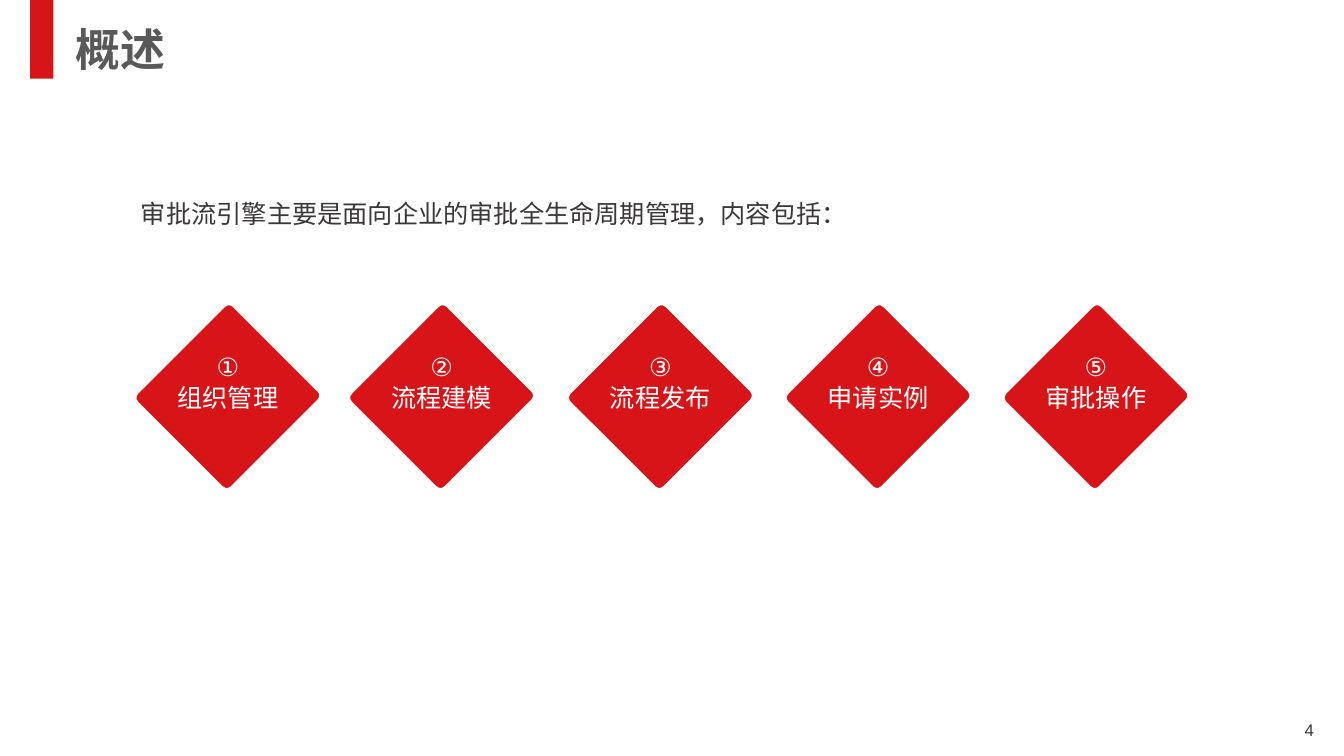
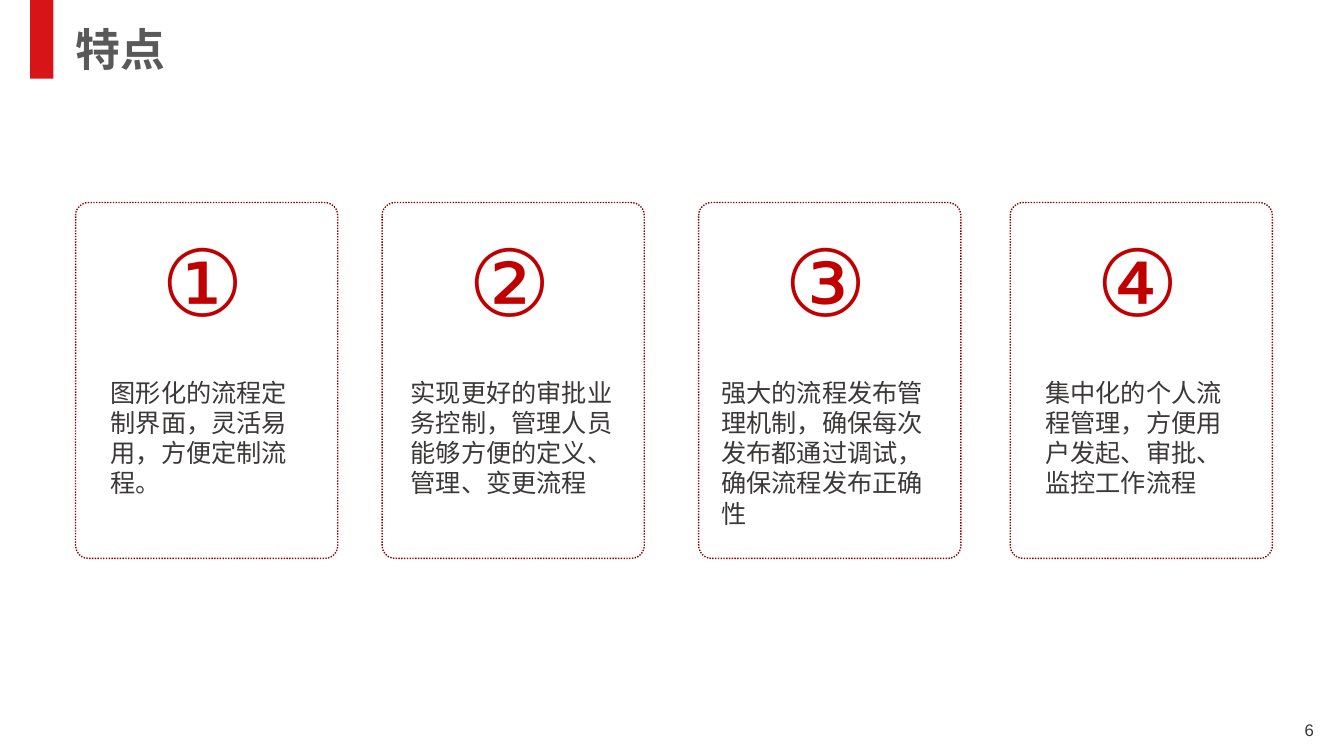
from pptx import Presentation
from pptx.dml.color import RGBColor
from pptx.enum.dml import MSO_LINE
from pptx.enum.shapes import MSO_SHAPE as SHAPE
from pptx.enum.text import MSO_ANCHOR as ANCHOR, PP_ALIGN as ALIGN
from pptx.util import Inches, Pt

FONT = "Arial"
RED = RGBColor(0xD7, 0x14, 0x18)
NUMERAL_RED = RGBColor(0xC0, 0x00, 0x00)
BORDER_RED = RGBColor(0x8E, 0x00, 0x00)
TITLE_GRAY = RGBColor(0x59, 0x59, 0x59)
BODY_GRAY = RGBColor(0x3B, 0x38, 0x38)
WHITE = RGBColor(0xFF, 0xFF, 0xFF)

CORNER = 0.049
DIAMOND_W, DIAMOND_H, DIAMOND_TOP = 1.32, 1.35, 3.26
CARD_W, CARD_H, CARD_TOP = 2.6, 3.53, 2.01

STEPS = [
    (1.6, "①", "组织管理"),
    (3.72, "②", "流程建模"),
    (5.89, "③", "流程发布"),
    (8.05, "④", "申请实例"),
    (10.21, "⑤", "审批操作"),
]
FEATURES = [
    (0.75, "①", 2.1, "图形化的流程定制界面，灵活易用，方便定制流程。"),
    (3.79, "②", 2.23, "实现更好的审批业务控制，管理人员能够方便的定义、管理、变更流程"),
    (6.93, "③", 2.35, "强大的流程发布管理机制，确保每次发布都通过调试，确保流程发布正确性"),
    (10.02, "④", 2.1, "集中化的个人流程管理，方便用户发起、审批、监控工作流程"),
]


def add_text(slide, box, *lines, size=18, color=BODY_GRAY, bold=False,
             align=ALIGN.LEFT, wrap=True, spacing=None):
    frame = slide.shapes.add_textbox(*map(Inches, box)).text_frame
    frame.word_wrap = wrap
    frame.vertical_anchor = ANCHOR.TOP
    for index, line in enumerate(lines):
        paragraph = frame.add_paragraph() if index else frame.paragraphs[0]
        paragraph.alignment = align
        if spacing:
            paragraph.line_spacing = spacing
        run = paragraph.add_run()
        run.text = line
        run.font.name = FONT
        run.font.size = Pt(size)
        run.font.bold = bold
        run.font.color.rgb = color


def add_block(slide, kind, box, fill, line=None, width=1, dash=None):
    block = slide.shapes.add_shape(kind, *map(Inches, box))
    block.shadow.inherit = False
    block.fill.solid()
    block.fill.fore_color.rgb = fill
    if kind == SHAPE.ROUNDED_RECTANGLE:
        block.adjustments[0] = CORNER
    if line is None:
        block.line.fill.background()
    else:
        block.line.color.rgb = line
        block.line.width = Pt(width)
        if dash:
            block.line.dash_style = dash
    return block


def add_page(deck, title, number):
    slide = deck.slides.add_slide(deck.slide_layouts[6])
    add_block(slide, SHAPE.RECTANGLE, (0.3, 0, 0.23, 0.78), RED)
    add_text(slide, (10.13, 7.09, 3, 0.4), number, size=12, align=ALIGN.RIGHT)
    add_text(slide, (0.65, 0.23, 11.5, 0.49), title, size=32,
             color=TITLE_GRAY, bold=True, spacing=0.9)
    return slide


def add_step(slide, left, top, numeral, label):
    diamond = add_block(slide, SHAPE.ROUNDED_RECTANGLE,
                        (left, top, DIAMOND_W, DIAMOND_H), RED, WHITE, 1.5)
    diamond.rotation = 45
    label_w = 1.2
    add_text(slide, (left + (DIAMOND_W - label_w) / 2, top + 0.18, label_w, 0.71),
             numeral, label, color=WHITE, align=ALIGN.CENTER, wrap=False)


def add_feature(slide, left, top, numeral, text_w, description):
    add_block(slide, SHAPE.ROUNDED_RECTANGLE, (left, top, CARD_W, CARD_H),
              WHITE, BORDER_RED, 1, MSO_LINE.ROUND_DOT)
    numeral_w = 1.09
    add_text(slide, (left + (CARD_W - numeral_w) / 2, top + 0.16, numeral_w, 1.21),
             numeral, size=66, color=NUMERAL_RED)
    add_text(slide, (left + (CARD_W - text_w) / 2, top + 1.68, text_w, 1.31),
             description)


def build_overview(deck):
    slide = add_page(deck, "概述", "4")
    add_text(slide, (1.3, 1.92, 11.29, 0.4),
             "审批流引擎主要是面向企业的审批全生命周期管理，内容包括：")
    for left, numeral, label in STEPS:
        add_step(slide, left, DIAMOND_TOP, numeral, label)


def build_features(deck):
    slide = add_page(deck, "特点", "6")
    for left, numeral, text_w, description in FEATURES:
        add_feature(slide, left, CARD_TOP, numeral, text_w, description)


def main():
    deck = Presentation()
    deck.slide_width = Inches(13.33)
    deck.slide_height = Inches(7.5)
    build_overview(deck)
    build_features(deck)
    deck.save("out.pptx")


if __name__ == "__main__":
    main()
